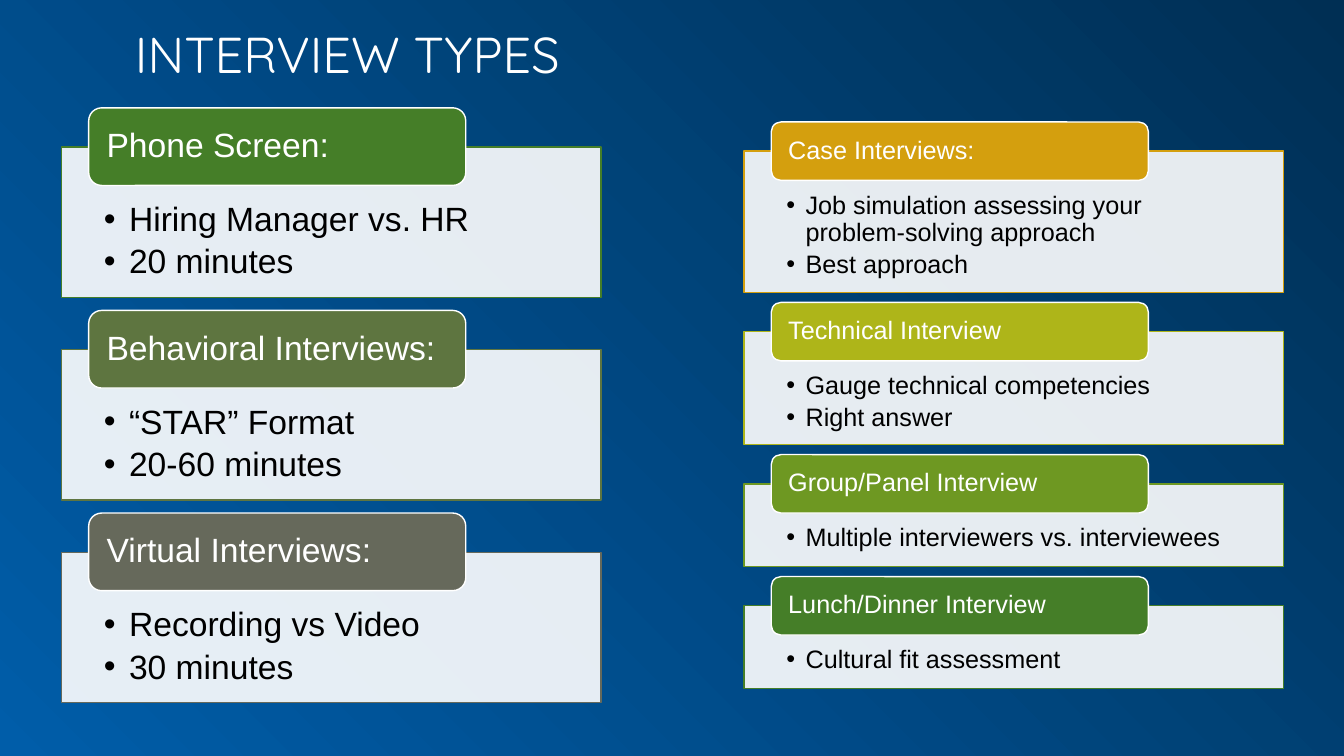
from lxml.etree import SubElement
from pptx import Presentation
from pptx.dml.color import RGBColor
from pptx.enum.shapes import MSO_SHAPE
from pptx.enum.text import MSO_ANCHOR, PP_ALIGN
from pptx.oxml.ns import qn
from pptx.util import Inches, Pt

WHITE = RGBColor(0xFF, 0xFF, 0xFF)
BLACK = RGBColor(0x00, 0x00, 0x00)
NAVY = RGBColor(0x00, 0x2F, 0x54)
BLUE = RGBColor(0x00, 0x5D, 0xA9)
GREEN = RGBColor(0x45, 0x7E, 0x28)
OLIVE = RGBColor(0x5E, 0x75, 0x40)
GRAY = RGBColor(0x66, 0x69, 0x5B)
GOLD = RGBColor(0xD4, 0x9F, 0x0E)
LIME = RGBColor(0xAE, 0xB5, 0x19)
LEAF = RGBColor(0x6E, 0x98, 0x22)

# Content: (heading, colour, panel height, bullets)
TITLE = "INTERVIEW TYPES"
COLUMNS = [
    {
        "left": 0.61, "top": 1.46, "gap": 0.52, "size": 24, "indent": 0.25,
        "tab_rise": 0.39, "tab_height": 0.77, "inset_top": 0.55, "inset_bottom": 0.19,
        "cards": [
            ("Phone Screen:", GREEN, 1.49, ["Hiring Manager vs. HR", "20 minutes"]),
            ("Behavioral Interviews:", OLIVE, 1.49, ["“STAR” Format", "20-60 minutes"]),
            ("Virtual Interviews:", GRAY, 1.49, ["Recording vs Video", "30 minutes"]),
        ],
    },
    {
        "left": 7.38, "top": 1.5, "gap": 0.39, "size": 18, "indent": 0.19,
        "tab_rise": 0.29, "tab_height": 0.58, "inset_top": 0.41, "inset_bottom": 0.14,
        "cards": [
            ("Case Interviews:", GOLD, 1.4,
             ["Job simulation assessing your problem-solving approach", "Best approach"]),
            ("Technical Interview", LIME, 1.12,
             ["Gauge technical competencies", "Right answer"]),
            ("Group/Panel Interview", LEAF, 0.82, ["Multiple interviewers vs. interviewees"]),
            ("Lunch/Dinner Interview", GREEN, 0.82, ["Cultural fit assessment"]),
        ],
    },
]
PANEL_WIDTH = 5.35
TAB_WIDTH = 3.74
TAB_OFFSET = 0.27


def add_block(page, kind, area, fill, line, insets, anchor):
    block = page.shapes.add_shape(kind, *(Inches(value) for value in area))
    block.shadow.inherit = False
    block.fill.solid()
    block.fill.fore_color.rgb = fill
    block.line.color.rgb = line
    block.line.width = Pt(1)
    frame = block.text_frame
    frame.word_wrap = True
    frame.vertical_anchor = anchor
    (frame.margin_left, frame.margin_top,
     frame.margin_right, frame.margin_bottom) = (Inches(value) for value in insets)
    return block


def write_lines(frame, lines, size, color, indent=0):
    frame.text = "\n".join(lines)
    for para in frame.paragraphs:
        para.alignment = PP_ALIGN.LEFT
        para.line_spacing = 0.9
        if indent:
            para.space_after = Pt(round(size * 0.18, 1))
            properties = para._p.get_or_add_pPr()
            properties.set("marL", str(Inches(indent)))
            properties.set("indent", str(-Inches(indent)))
            SubElement(properties, qn("a:buFont"), typeface="Arial")
            SubElement(properties, qn("a:buChar"), char="•")
        for span in para.runs:
            span.font.name = "Arial"
            span.font.size = Pt(size)
            span.font.color.rgb = color


def add_card(page, column, top, card):
    heading, color, height, bullets = card
    left, size = column["left"], column["size"]
    # Translucent panel with bullets
    panel = add_block(page, MSO_SHAPE.RECTANGLE, (left, top, PANEL_WIDTH, height), WHITE, color,
                      (0.42, column["inset_top"], 0.42, column["inset_bottom"]), MSO_ANCHOR.TOP)
    tint = panel._element.spPr.find(qn("a:solidFill")).find(qn("a:srgbClr"))
    SubElement(tint, qn("a:alpha"), val="90000")
    write_lines(panel.text_frame, bullets, size, BLACK, column["indent"])
    # Heading tab over the panel's top edge
    tab_area = (left + TAB_OFFSET, top - column["tab_rise"], TAB_WIDTH, column["tab_height"])
    tab = add_block(page, MSO_SHAPE.ROUNDED_RECTANGLE, tab_area, color, WHITE,
                    (0.14, 0, 0.14, 0), MSO_ANCHOR.MIDDLE)
    write_lines(tab.text_frame, [heading], size, WHITE)


def main():
    deck = Presentation()
    deck.slide_width, deck.slide_height = Inches(13.33), Inches(7.5)
    page = deck.slides.add_slide(deck.slide_layouts[6])

    # Background
    backdrop = page.background.fill
    backdrop.gradient()
    backdrop.gradient_angle = 225
    for stop, color in zip(backdrop.gradient_stops, (NAVY, BLUE)):
        stop.color.rgb = color

    # Title
    box = page.shapes.add_textbox(Inches(0), Inches(0.18), Inches(6.89), Inches(0.71))
    box.text_frame.word_wrap = True
    box.text_frame.text = TITLE
    para = box.text_frame.paragraphs[0]
    para.alignment = PP_ALIGN.CENTER
    span = para.runs[0]
    span.font.name = "Quicksand"
    span.font.size = Pt(36)
    span.font.color.rgb = WHITE

    # Columns of cards
    for column in COLUMNS:
        top = column["top"]
        for card in column["cards"]:
            add_card(page, column, top, card)
            top += card[2] + column["gap"]

    deck.save("out.pptx")


if __name__ == "__main__":
    main()
